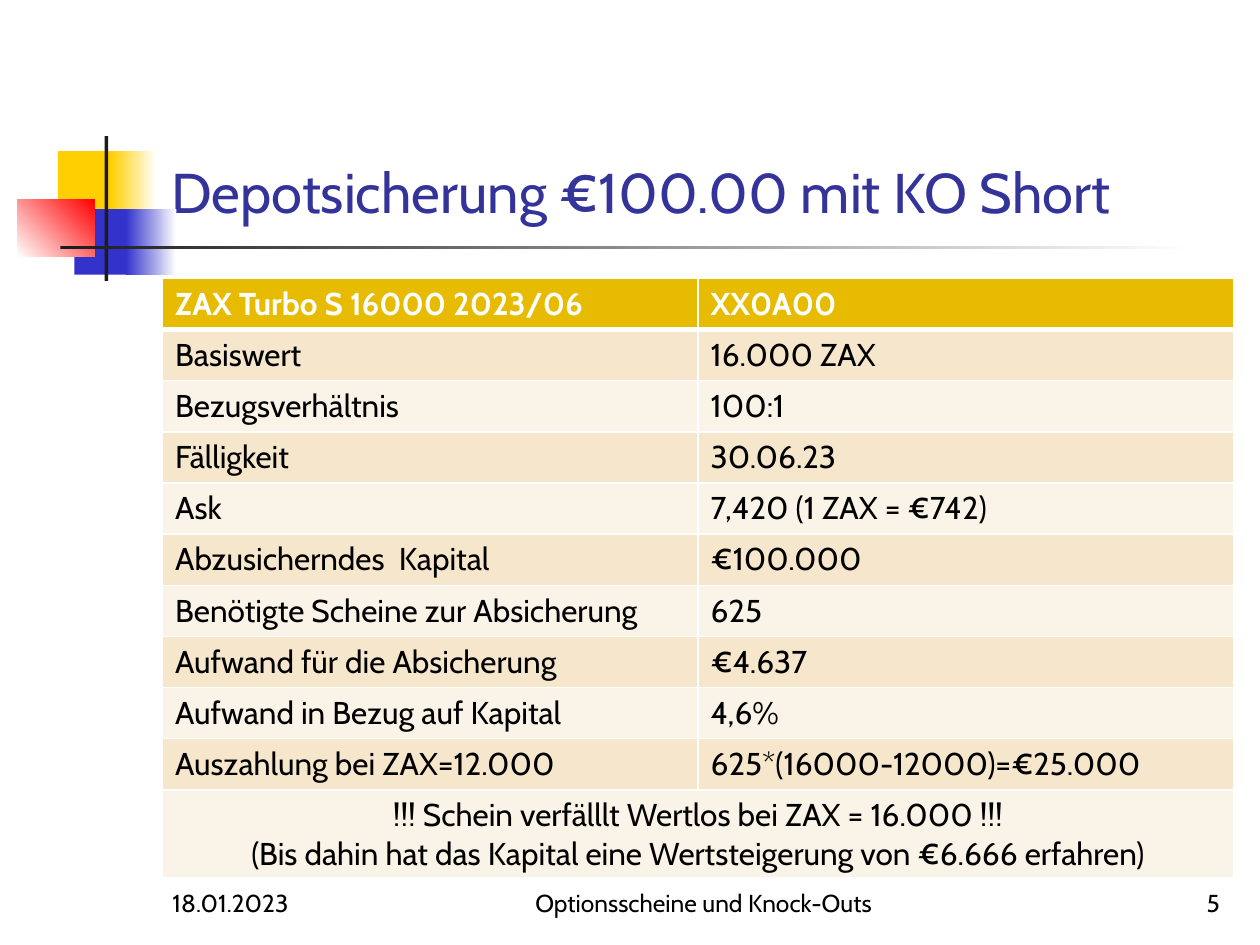
import pptx
import pptx.dml.color
import pptx.enum.shapes
import pptx.enum.text
import pptx.oxml
import pptx.oxml.ns
import pptx.util
from pptx.util import Inches

RGBColor = pptx.dml.color.RGBColor
Align = pptx.enum.text.PP_ALIGN
Anchor = pptx.enum.text.MSO_ANCHOR

FONT = "Cabin"
WHITE = RGBColor(0xFF, 0xFF, 0xFF)
BLACK = RGBColor(0, 0, 0)
YELLOW = RGBColor(0xFF, 0xCF, 0x01)
BLUE = RGBColor(0x33, 0x33, 0xCC)
RED = RGBColor(0xFF, 0, 0)
CHARCOAL = RGBColor(0x1C, 0x1C, 0x1C)
TITLE_BLUE = RGBColor(0x33, 0x33, 0x99)
HEADER_GOLD = RGBColor(0xE7, 0xBB, 0x01)
BAND_DARK = RGBColor(0xF6, 0xE7, 0xCC)
BAND_LIGHT = RGBColor(0xFA, 0xF3, 0xE7)

# left, top, width, height, colours from first to last, gradient angle
DECORATIONS = [
    (0.46, 1.2, 0.48, 0.52, [YELLOW], 0),
    (0.88, 1.2, 0.36, 0.52, [YELLOW, WHITE], 0),
    (0.59, 1.66, 0.46, 0.52, [BLUE], 0),
    (1, 1.66, 0.4, 0.52, [BLUE, WHITE], 0),
    (0.14, 1.58, 0.61, 0.46, [WHITE, RED], 45),
    (0.83, 1.08, 0.03, 1.15, [CHARCOAL], 0),
    (0.48, 1.95, 9, 0.03, [CHARCOAL, WHITE], 0),
]

FOOTERS = [
    (1.27, 2.08, "18.01.2023", Align.LEFT),
    (4, 3.17, "Optionsscheine und Knock-Outs", Align.CENTER),
    (7.7, 2.08, "5", Align.RIGHT),
]

ROWS = [
    ("ZAX Turbo S 16000 2023/06", "XX0A00"),
    ("Basiswert", "16.000 ZAX"),
    ("Bezugsverhältnis", "100:1"),
    ("Fälligkeit", "30.06.23"),
    ("Ask", "7,420 (1 ZAX = €742)"),
    ("Abzusicherndes  Kapital", "€100.000"),
    ("Benötigte Scheine zur Absicherung", "625"),
    ("Aufwand für die Absicherung", "€4.637"),
    ("Aufwand in Bezug auf Kapital", "4,6%"),
    ("Auszahlung bei ZAX=12.000", "625*(16000-12000)=€25.000"),
]
WARNING = (
    "!!! Schein verfälllt Wertlos bei ZAX = 16.000 !!!\n"
    "(Bis dahin hat das Kapital eine Wertsteigerung von €6.666 erfahren)"
)


def write_text(frame, text, size=18, color=BLACK, bold=False, align=Align.LEFT):
    """Fill a text frame, one paragraph per line of text."""
    frame.text = text
    for para in frame.paragraphs:
        para.alignment = align
        for span in para.runs:
            span.font.name = FONT
            span.font.size = pptx.util.Pt(size)
            span.font.bold = bold
            span.font.color.rgb = color


def add_decoration(page, left, top, width, height, colors, angle):
    shape = page.shapes.add_shape(
        pptx.enum.shapes.MSO_SHAPE.RECTANGLE,
        Inches(left), Inches(top), Inches(width), Inches(height))
    shape.shadow.inherit = False
    shape.line.fill.background()
    if len(colors) == 1:
        shape.fill.solid()
        shape.fill.fore_color.rgb = colors[0]
        return
    shape.fill.gradient()
    shape.fill.gradient_angle = angle
    for position, (stop, color) in enumerate(zip(shape.fill.gradient_stops, colors)):
        stop.position = position
        stop.color.rgb = color


def set_title(page, text):
    title = page.shapes.title
    title.left, title.top = Inches(1.26), Inches(0.23)
    title.width, title.height = Inches(8.52), Inches(1.6)
    frame = title.text_frame
    frame.word_wrap = True
    frame.auto_size = pptx.enum.text.MSO_AUTO_SIZE.NONE
    frame.vertical_anchor = Anchor.BOTTOM
    write_text(frame, text, size=32, color=TITLE_BLUE)


def add_footer(page, left, width, text, align):
    box = page.shapes.add_textbox(Inches(left), Inches(6.83), Inches(width), Inches(0.5))
    box.text_frame.word_wrap = True
    box.text_frame.vertical_anchor = Anchor.BOTTOM
    write_text(box.text_frame, text, size=14, align=align)


def style_cell(cell, fill, bottom_width=1, top_width=1):
    """Give a cell white borders and a plain fill."""
    properties = cell._tc.get_or_add_tcPr()
    widths = {"lnL": 1, "lnR": 1, "lnT": top_width, "lnB": bottom_width}
    for tag, width in widths.items():
        properties.append(pptx.oxml.parse_xml(
            f'<a:{tag} {pptx.oxml.ns.nsdecls("a")} w="{pptx.util.Pt(width)}">'
            f'<a:solidFill><a:srgbClr val="{WHITE}"/></a:solidFill></a:{tag}>'))
    cell.fill.solid()
    cell.fill.fore_color.rgb = fill


def add_warrant_table(page):
    row_height, warning_height = 0.406, 0.7
    last = len(ROWS)
    table = page.shapes.add_table(
        last + 1, 2, Inches(1.29), Inches(2.21), Inches(8.5),
        Inches(row_height * last + warning_height)).table
    for column in table.columns:
        column.width = Inches(4.25)
    for number, row in enumerate(table.rows):
        row.height = Inches(warning_height if number == last else row_height)
        header = number == 0
        band = BAND_DARK if number % 2 else BAND_LIGHT
        for cell in row.cells:
            style_cell(cell, HEADER_GOLD if header else band,
                       bottom_width=3 if header else 1,
                       top_width=3 if number == 1 else 1)
    for number, texts in enumerate(ROWS):
        header = number == 0
        for column, text in enumerate(texts):
            write_text(table.cell(number, column).text_frame, text,
                       color=WHITE if header else BLACK, bold=header)
    warning = table.cell(last, 0)
    warning.merge(table.cell(last, 1))
    write_text(warning.text_frame, WARNING, align=Align.CENTER)


def main():
    deck = pptx.Presentation()
    deck.slide_width, deck.slide_height = Inches(10), Inches(7.5)
    page = deck.slides.add_slide(deck.slide_layouts.get_by_name("Title Only"))
    for decoration in DECORATIONS:
        add_decoration(page, *decoration)
    set_title(page, "Depotsicherung €100.00 mit KO Short")
    for footer in FOOTERS:
        add_footer(page, *footer)
    add_warrant_table(page)
    deck.save("out.pptx")


if __name__ == "__main__":
    main()
